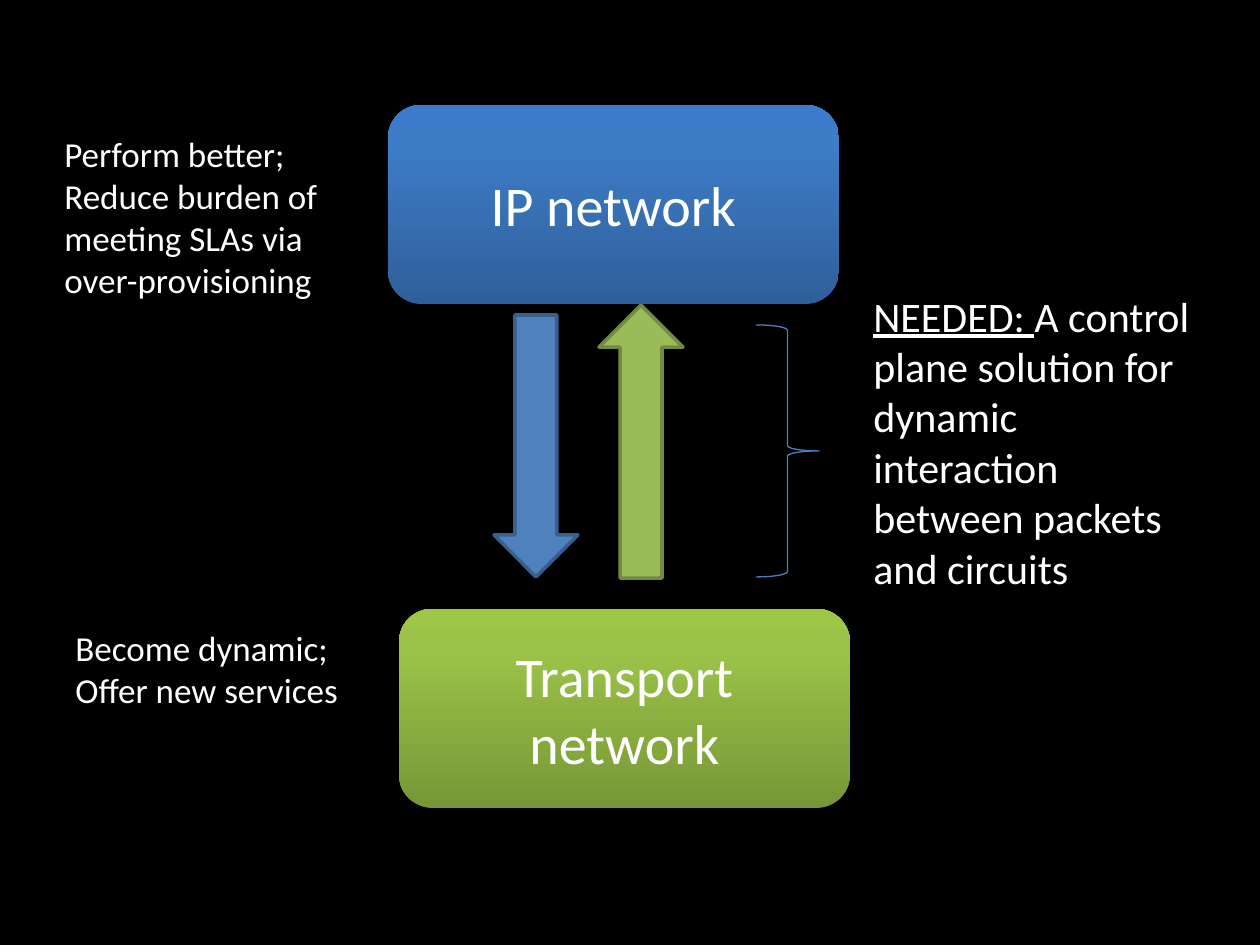
"""Build a slide on the interaction between an IP network and a transport network."""
from copy import deepcopy
from dataclasses import dataclass

from pptx import Presentation
from pptx.dml.color import RGBColor
from pptx.enum.shapes import MSO_SHAPE
from pptx.enum.text import MSO_ANCHOR, MSO_AUTO_SIZE, PP_ALIGN
from pptx.util import Emu, Pt

PX = 914400 // 126


@dataclass(frozen=True)
class Theme:
    font: str = "Calibri"
    background: str = "000000"
    text: str = "FFFFFF"
    ip_gradient: tuple = ("2F5F99", "3D7CC7", "3A7CCB")
    transport_gradient: tuple = ("779737", "9BC348", "9DC746")
    gradient_stops: tuple = (0, 0.8, 1)
    down_fill: str = "4F81BD"
    down_line: str = "3A5F8C"
    up_fill: str = "9BBB59"
    up_line: str = "738A42"
    brace: str = "4B7EBC"
    network_size: int = 32
    need_size: int = 24
    note_size: int = 20


THEME = Theme()

NETWORKS = [
    ("IP network", (388, 105, 451, 199), THEME.ip_gradient),
    ("Transport network", (399, 609, 451, 199), THEME.transport_gradient),
]
SYMBOLS = [
    (MSO_SHAPE.DOWN_ARROW, (494, 315, 84, 262), 0, THEME.down_fill, THEME.down_line, 2),
    (MSO_SHAPE.DOWN_ARROW, (599, 305, 84, 273), 180, THEME.up_fill, THEME.up_line, 2),
    (MSO_SHAPE.RIGHT_BRACE, (756, 325, 63, 252), 0, None, THEME.brace, 0.75),
]
NOTES = [
    ((861, 284, 357, 318), THEME.need_size,
     [[("NEEDED: ", True),
       ("A control plane solution for dynamic interaction between packets and circuits", False)]]),
    ((52, 126, 305, 183), THEME.note_size,
     [[("Perform better;", False)],
      [("Reduce burden of meeting SLAs via over-provisioning", False)]]),
    ((63, 620, 305, 97), THEME.note_size,
     [[("Become dynamic;", False)], [("Offer new services", False)]]),
]


def emu(box):
    return [Emu(length * PX) for length in box]


def rgb(color):
    return RGBColor.from_string(color)


def style_span(span, size, underline=False):
    span.font.name = THEME.font
    span.font.size = Pt(size)
    span.font.color.rgb = rgb(THEME.text)
    if underline:
        span.font.underline = True


def add_shape(page, kind, box):
    shape = page.shapes.add_shape(kind, *emu(box))
    shape.shadow.inherit = False
    return shape


def add_network(page, label, box, colors):
    shape = add_shape(page, MSO_SHAPE.ROUNDED_RECTANGLE, box)
    shape.line.fill.background()
    shape.fill.gradient()
    shape.fill.gradient_angle = 90
    stop_list = shape.fill._fill._gradFill.gsLst
    stop_list.append(deepcopy(stop_list[-1]))
    for stop, position, color in zip(shape.fill.gradient_stops, THEME.gradient_stops, colors):
        stop.position = position
        stop.color.rgb = rgb(color)
    frame = shape.text_frame
    frame.text = label
    frame.word_wrap = True
    frame.vertical_anchor = MSO_ANCHOR.MIDDLE
    para = frame.paragraphs[0]
    para.alignment = PP_ALIGN.CENTER
    style_span(para.runs[0], THEME.network_size)


def add_symbol(page, kind, box, rotation, fill, line, width):
    shape = add_shape(page, kind, box)
    shape.rotation = rotation
    if fill:
        shape.fill.solid()
        shape.fill.fore_color.rgb = rgb(fill)
    else:
        shape.fill.background()
    shape.line.color.rgb = rgb(line)
    shape.line.width = Pt(width)


def add_note(page, box, size, paragraphs):
    frame = page.shapes.add_textbox(*emu(box)).text_frame
    frame.word_wrap = True
    frame.auto_size = MSO_AUTO_SIZE.SHAPE_TO_FIT_TEXT
    for index, spans in enumerate(paragraphs):
        para = frame.add_paragraph() if index else frame.paragraphs[0]
        for text, underline in spans:
            span = para.add_run()
            span.text = text
            style_span(span, size, underline)


def main():
    deck = Presentation()
    deck.slide_width, deck.slide_height = emu((1260, 945))
    page = deck.slides.add_slide(deck.slide_layouts[6])
    page.background.fill.solid()
    page.background.fill.fore_color.rgb = rgb(THEME.background)
    for network in NETWORKS:
        add_network(page, *network)
    for symbol in SYMBOLS:
        add_symbol(page, *symbol)
    for note in NOTES:
        add_note(page, *note)
    deck.save("out.pptx")


if __name__ == "__main__":
    main()
